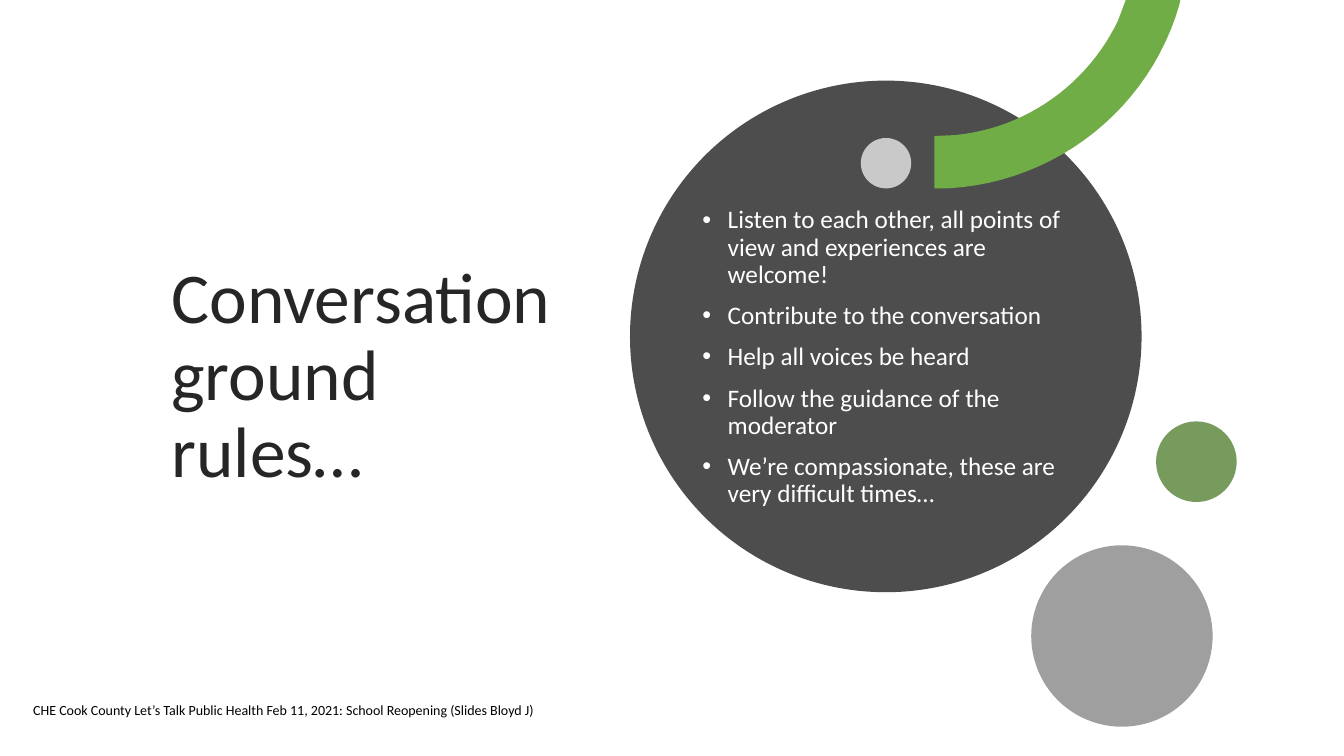
from lxml.etree import SubElement
from pptx import Presentation
from pptx.dml.color import RGBColor
from pptx.enum.shapes import MSO_SHAPE as Shape
from pptx.enum.text import MSO_ANCHOR as Anchor, MSO_AUTO_SIZE as AutoSize, PP_ALIGN as Align
from pptx.oxml.ns import qn
from pptx.util import Pt

WHITE = RGBColor(0xFF, 0xFF, 0xFF)
BLACK = RGBColor(0x00, 0x00, 0x00)
TITLE_GREY = RGBColor(0x26, 0x26, 0x26)
DISC_GREY = RGBColor(0x4D, 0x4D, 0x4D)
DARK_GREY = RGBColor(0x40, 0x40, 0x40)
GREEN = RGBColor(0x70, 0xAD, 0x47)
DARK_GREEN = RGBColor(0x54, 0x82, 0x35)

FONT = "Calibri"
CURVE_STEPS = 24
RULES = [
    "Listen to each other, all points of view and experiences are welcome!",
    "Contribute to the conversation",
    "Help all voices be heard",
    "Follow the guidance of the moderator",
    "We’re compassionate, these are very difficult times…",
]
FOOTER = "CHE Cook County Let’s Talk Public Health Feb 11, 2021: School Reopening (Slides Bloyd J)"

# Circles: left, top, diameter, colour, opacity in percent
LARGE_DISC = (450, 57.6, 365.4, DISC_GREY, 100)
SMALL_DISCS = [
    (614.9, 98.6, 36, WHITE, 70),
    (825.8, 301, 57.6, DARK_GREEN, 80),
    (736.6, 389.5, 129.6, DARK_GREY, 50),
]

# Edges of the green band, each a cubic curve
OUTER_EDGE = [(842.4, 3.6), (821.5, 76.3), (756, 130.3), (676.8, 134.6)]
INNER_EDGE = [(682.6, 96.5), (733.7, 91.4), (776.9, 59.8), (798.5, 15.1)]


def set_values(target, values):
    for name, value in values.items():
        setattr(target, name, value)


def place(shape, left, top, width, height):
    set_values(shape, {"left": Pt(left), "top": Pt(top),
                       "width": Pt(width), "height": Pt(height)})


def paint(shape, colour, opacity=100):
    shape.shadow.inherit = False
    shape.line.fill.background()
    shape.fill.solid()
    shape.fill.fore_color.rgb = colour
    if opacity < 100:
        colour_element = shape.fill._xPr.find(qn("a:solidFill"))[0]
        SubElement(colour_element, qn("a:alpha"), val=str(opacity * 1000))


def add_circle(slide, left, top, diameter, colour, opacity):
    circle = slide.shapes.add_shape(
        Shape.OVAL, Pt(left), Pt(top), Pt(diameter), Pt(diameter))
    paint(circle, colour, opacity)


def curve_points(start, control_1, control_2, end):
    points = []
    for step in range(CURVE_STEPS + 1):
        t = step / CURVE_STEPS
        weights = ((1 - t) ** 3, 3 * t * (1 - t) ** 2, 3 * t ** 2 * (1 - t), t ** 3)
        corners = (start, control_1, control_2, end)
        points.append(tuple(sum(w * c[axis] for w, c in zip(weights, corners))
                            for axis in (0, 1)))
    return points


def add_band(slide):
    outline = [(804.2, 0), (843.1, 0), *curve_points(*OUTER_EDGE),
               (667.4, 134.6), (667.4, 97.2), *curve_points(*INNER_EDGE)]
    points = [(Pt(x), Pt(y)) for x, y in outline]
    builder = slide.shapes.build_freeform(*points[0])
    builder.add_line_segments(points[1:], close=True)
    paint(builder.convert_to_shape(), GREEN)


def write_text(shape, lines, size, colour, paragraph_format, anchor):
    frame = shape.text_frame
    frame.text = "\n".join(lines)
    set_values(frame, {"word_wrap": True, "auto_size": AutoSize.NONE,
                       "vertical_anchor": anchor})
    for paragraph in frame.paragraphs:
        set_values(paragraph, {"alignment": Align.LEFT, **paragraph_format})
        for run in paragraph.runs:
            set_values(run.font, {"name": FONT, "size": Pt(size)})
            run.font.color.rgb = colour


def add_bullets(shape, indent):
    for paragraph in shape.text_frame.paragraphs:
        properties = paragraph._p.get_or_add_pPr()
        properties.set("marL", str(Pt(indent)))
        properties.set("indent", str(-Pt(indent)))
        SubElement(properties, qn("a:buFont"), typeface="Arial")
        SubElement(properties, qn("a:buChar"), char="•")


def main():
    presentation = Presentation()
    set_values(presentation, {"slide_width": Pt(960), "slide_height": Pt(540)})
    slide = presentation.slides.add_slide(presentation.slide_layouts[1])

    # Title
    title = slide.shapes.title
    place(title, 115.2, 85.7, 299.5, 367.9)
    write_text(title, ["Conversation ground rules…"], 51, TITLE_GREY,
               {"line_spacing": 0.9}, Anchor.MIDDLE)

    # Discs and green band
    add_circle(slide, *LARGE_DISC)
    add_circle(slide, *SMALL_DISCS[0])
    add_band(slide)
    for disc in SMALL_DISCS[1:]:
        add_circle(slide, *disc)

    # Rules, brought in front of the large disc
    body = slide.placeholders[1]
    slide.shapes._spTree.append(body._element)
    place(body, 494.6, 139, 282.2, 233)
    write_text(body, RULES, 18, WHITE,
               {"line_spacing": 0.9, "space_before": Pt(10)}, Anchor.MIDDLE)
    add_bullets(body, 18)

    # Footer
    footer = slide.shapes.add_textbox(Pt(16.6), Pt(497.5), Pt(577.4), Pt(19.4))
    write_text(footer, [FOOTER], 10, BLACK, {}, Anchor.TOP)

    presentation.save("out.pptx")


if __name__ == "__main__":
    main()
